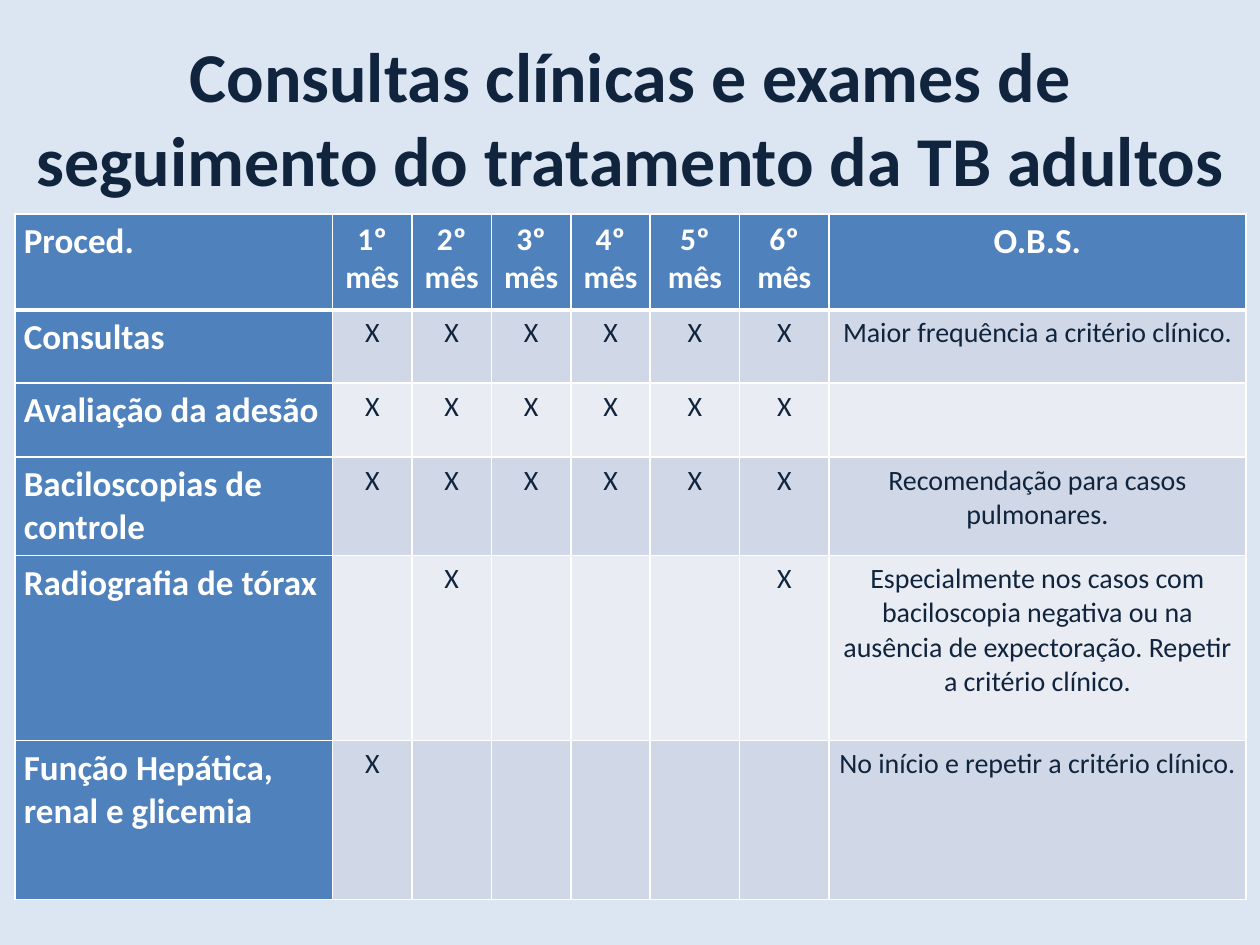
from lxml import etree
from pptx import Presentation
from pptx.dml.color import RGBColor
from pptx.enum.text import MSO_ANCHOR, MSO_AUTO_SIZE, PP_ALIGN
from pptx.oxml.ns import qn
from pptx.util import Pt

LEFT, CENTER = PP_ALIGN.LEFT, PP_ALIGN.CENTER
TOP, MIDDLE = MSO_ANCHOR.TOP, MSO_ANCHOR.MIDDLE
NO_AUTOFIT = MSO_AUTO_SIZE.NONE

# Content: each procedure with the months it is due and its remark
TITLE = "Consultas clínicas e exames de seguimento do tratamento da TB adultos"
MONTHS = range(1, 7)
PROCEDURES = [
    ("Consultas", MONTHS, "Maior frequência a critério clínico."),
    ("Avaliação da adesão", MONTHS, ""),
    ("Baciloscopias de controle", MONTHS, "Recomendação para casos pulmonares."),
    ("Radiografia de tórax", (2, 6),
     "Especialmente nos casos com baciloscopia negativa ou na ausência de "
     "expectoração. Repetir a critério clínico."),
    ("Função Hepática, renal e glicemia", (1,),
     "No início e repetir a critério clínico."),
]
HEADER = ["Proced.", *(f"{month}º mês" for month in MONTHS), "O.B.S."]
BODY = [[name, *("X" if month in due else "" for month in MONTHS), remark]
        for name, due, remark in PROCEDURES]

THEME = {
    "font": "Calibri",
    "background": "DCE6F2", "ink": "10243E", "white": "FFFFFF",
    "accent": "4F81BD", "bands": ("D0D8E7", "E9ECF3"),
    "title": 40, "label": 20, "month": 18, "body": 16,
    "rule": 0.96, "header_rule": 3,
}

# Layout in points
SLIDE_W, SLIDE_H = 720, 540
MARGIN = 8.64
TITLE_TOP, TITLE_H = 21.6, 90
TABLE_TOP = 122.4
COLUMN_WIDTHS = [181.4] + [45.4] * 4 + [51.1] * 2 + [238.2]
ROW_HEIGHTS = [54.7, 41.9, 42.3, 56, 105.8, 90.7]
INSET_X, INSET_Y = 5, 3.6


def rgb(color):
    return RGBColor.from_string(color)


def write(frame, text, *, size, color, bold=False, align=CENTER):
    paragraph = frame.paragraphs[0]
    paragraph.alignment = align
    run = paragraph.add_run()
    run.text = text
    run.font.name = THEME["font"]
    run.font.size = Pt(size)
    run.font.bold = bold
    run.font.color.rgb = rgb(color)


def add_borders(cell, widths):
    properties = cell._tc.get_or_add_tcPr()
    for side, width in widths.items():
        line = etree.SubElement(properties, qn(f"a:ln{side}"), w=str(Pt(width)))
        fill = etree.SubElement(line, qn("a:solidFill"))
        etree.SubElement(fill, qn("a:srgbClr"), val=THEME["white"])


def format_cell(cell, text, row, column):
    is_header, is_label = row == 0, column == 0
    is_month = is_header and 0 < column < len(HEADER) - 1
    strong = is_header or is_label

    # Borders precede the fill in the cell properties
    rule, header_rule = THEME["rule"], THEME["header_rule"]
    add_borders(cell, {"L": rule, "R": rule,
                       "T": header_rule if row == 1 else rule,
                       "B": header_rule if is_header else rule})
    cell.fill.solid()
    cell.fill.fore_color.rgb = rgb(
        THEME["accent"] if strong else THEME["bands"][(row - 1) % 2])
    cell.margin_left = cell.margin_right = Pt(INSET_X)
    cell.margin_top = cell.margin_bottom = Pt(INSET_Y)
    cell.vertical_anchor = TOP
    if text:
        size = "month" if is_month else "label" if strong else "body"
        write(cell.text_frame, text, size=THEME[size], bold=strong,
              color=THEME["white" if strong else "ink"],
              align=LEFT if is_label else CENTER)


def main():
    presentation = Presentation()
    presentation.slide_width, presentation.slide_height = Pt(SLIDE_W), Pt(SLIDE_H)
    slide = presentation.slides.add_slide(presentation.slide_layouts[5])
    slide.background.fill.solid()
    slide.background.fill.fore_color.rgb = rgb(THEME["background"])

    # Title
    title = slide.shapes.title
    title.left, title.top = Pt(MARGIN), Pt(TITLE_TOP)
    title.width, title.height = Pt(SLIDE_W - 2 * MARGIN), Pt(TITLE_H)
    title.text_frame.auto_size = NO_AUTOFIT
    title.text_frame.word_wrap = True
    title.text_frame.vertical_anchor = MIDDLE
    write(title.text_frame, TITLE, size=THEME["title"], color=THEME["ink"], bold=True)

    # Follow-up schedule
    rows = [HEADER, *BODY]
    schedule = slide.shapes.add_table(
        len(rows), len(HEADER), Pt(MARGIN), Pt(TABLE_TOP),
        Pt(sum(COLUMN_WIDTHS)), Pt(sum(ROW_HEIGHTS))).table
    for column, width in zip(schedule.columns, COLUMN_WIDTHS):
        column.width = Pt(width)
    for row, height in zip(schedule.rows, ROW_HEIGHTS):
        row.height = Pt(height)
    for r, texts in enumerate(rows):
        for c, text in enumerate(texts):
            format_cell(schedule.cell(r, c), text, r, c)

    presentation.save("out.pptx")


if __name__ == "__main__":
    main()
